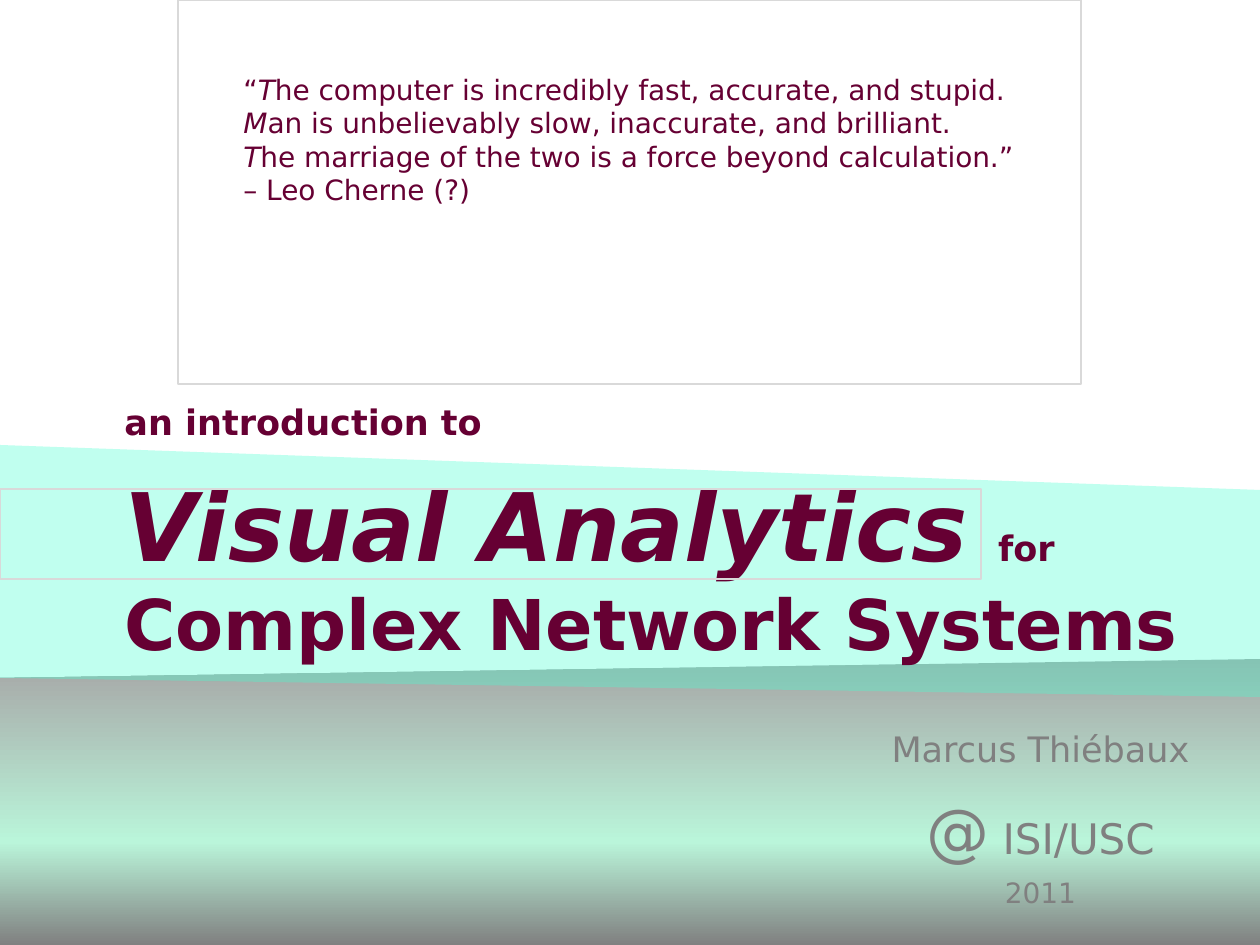
from copy import deepcopy
from dataclasses import dataclass
from typing import NamedTuple

from lxml import etree
from pptx import Presentation
from pptx import util as u
from pptx.dml.color import RGBColor
from pptx.enum import shapes, text
from pptx.oxml.ns import qn

PX = 914400 / 126
WIDE, HIGH = 1260, 945


@dataclass(frozen=True)
class Theme:
    font: str = "DejaVu Sans"
    wine: str = "660033"
    gray: str = "808080"
    rule: str = "D9D9D9"
    mint: str = "47FFD1"
    clear: int = 34
    floor: tuple = ((0, "A6A6A6"), (0.64, "BAF5DA"), (1, "808080"))
    quote: int = 16
    small: int = 20
    hero: int = 54
    gap: int = 48
    head: int = 40
    place: int = 24
    sign: int = 36
    year: int = 16


T = Theme()


class Box(NamedTuple):
    x: int
    y: int
    w: int
    h: int


class Run(NamedTuple):
    text: str
    size: int
    slant: bool = False


class Para(NamedTuple):
    runs: list
    form: dict = {}


class Block(NamedTuple):
    box: Box
    paras: list
    color: str
    bold: bool = False
    anchor: text.MSO_ANCHOR = text.MSO_ANCHOR.TOP


def emu(px: int) -> u.Emu:
    return u.Emu(round(px * PX))


def put(item, form: dict) -> None:
    """Set each named attribute of item."""
    for name, value in form.items():
        setattr(item, name, value)


def poly(slide, points: list):
    """Draw a closed outline without a line."""
    pen = slide.shapes.build_freeform(*points[0], scale=PX)
    pen.add_line_segments(points[1:], close=True)
    shape = pen.convert_to_shape()
    shape.shadow.inherit = False
    shape.line.fill.background()
    return shape


def fade(shape, stops: tuple) -> None:
    """Fill from top to bottom through three colours."""
    fill = shape.fill
    fill.gradient()
    fill.gradient_angle = 270
    first = next(shape._element.iter(qn("a:gs")))
    first.addnext(deepcopy(first))
    for stop, (at, color) in zip(fill.gradient_stops, stops):
        stop.position = at
        stop.color.rgb = RGBColor.from_string(color)


def tint(shape, color: str, clear: int) -> None:
    """Fill with one colour at the given percent of opacity."""
    shape.fill.solid()
    shape.fill.fore_color.rgb = RGBColor.from_string(color)
    tone = next(shape._element.iter(qn("a:srgbClr")))
    etree.SubElement(tone, qn("a:alpha"), val=str(clear * 1000))


def frame(slide, box: Box) -> None:
    shape = slide.shapes.add_shape(shapes.MSO_SHAPE.RECTANGLE, *map(emu, box))
    shape.shadow.inherit = False
    shape.fill.background()
    shape.line.color.rgb = RGBColor.from_string(T.rule)
    shape.line.width = u.Pt(0.75)


def write(slide, block: Block) -> None:
    body = slide.shapes.add_textbox(*map(emu, block.box)).text_frame
    put(body, {"word_wrap": True, "vertical_anchor": block.anchor})
    for i, item in enumerate(block.paras):
        para = body.add_paragraph() if i else body.paragraphs[0]
        put(para, item.form)
        for part in item.runs:
            if part is None:
                para.add_line_break()
                continue
            run = para.add_run()
            run.text = part.text
            put(run.font, {"name": T.font, "size": u.Pt(part.size),
                           "bold": block.bold, "italic": part.slant})
            run.font.color.rgb = RGBColor.from_string(block.color)


MID = {"alignment": text.PP_ALIGN.CENTER, "line_spacing": 1.1}

FLOOR = [(0, 678), (WIDE, 659), (WIDE, HIGH), (0, HIGH)]
BAND = [(0, 445), (WIDE, 490), (WIDE, 697), (0, 678)]
FRAMES = [Box(0, 489, 981, 90), Box(178, 0, 903, 384)]

LINES = [
    ("T", "he computer is incredibly fast, accurate, and stupid. "),
    ("M", "an is unbelievably slow, inaccurate, and brilliant.  "),
    ("T", "he marriage of the two is a force beyond calculation.”"),
]
QUOTE = [Run("“", T.quote)]
for cap, rest in LINES:
    QUOTE += [Run(cap, T.quote, True), Run(rest, T.quote)]

BLOCKS = [
    Block(Box(798, 717, 485, 195), [
        Para([Run("Marcus Thiébaux", T.small)], MID),
        Para([Run("@", T.sign), Run(" ISI/USC", T.place)],
             MID | {"space_before": u.Pt(8.5)}),
        Para([Run("2011", T.year)], MID | {"space_before": u.Pt(3)}),
    ], T.gray),
    Block(Box(112, 311, 1116, 360), [
        Para([Run("an introduction to", T.small)]),
        Para([Run("Visual Analytics", T.hero, True), Run(" ", T.gap),
              Run("for", T.small), Run(" ", T.head), None,
              Run("Complex Network Systems", T.head)],
             {"space_before": u.Pt(14)}),
    ], T.wine, True, text.MSO_ANCHOR.BOTTOM),
    Block(Box(231, 66, 799, 149), [
        Para(QUOTE),
        Para([Run("– Leo Cherne (?)", T.quote)]),
    ], T.wine),
]


def main() -> None:
    deck = Presentation()
    put(deck, {"slide_width": emu(WIDE), "slide_height": emu(HIGH)})
    slide = deck.slides.add_slide(deck.slide_layouts[6])
    fade(poly(slide, FLOOR), T.floor)
    tint(poly(slide, BAND), T.mint, T.clear)
    for block in BLOCKS:
        write(slide, block)
    for box in FRAMES:
        frame(slide, box)
    deck.save("out.pptx")


if __name__ == "__main__":
    main()
